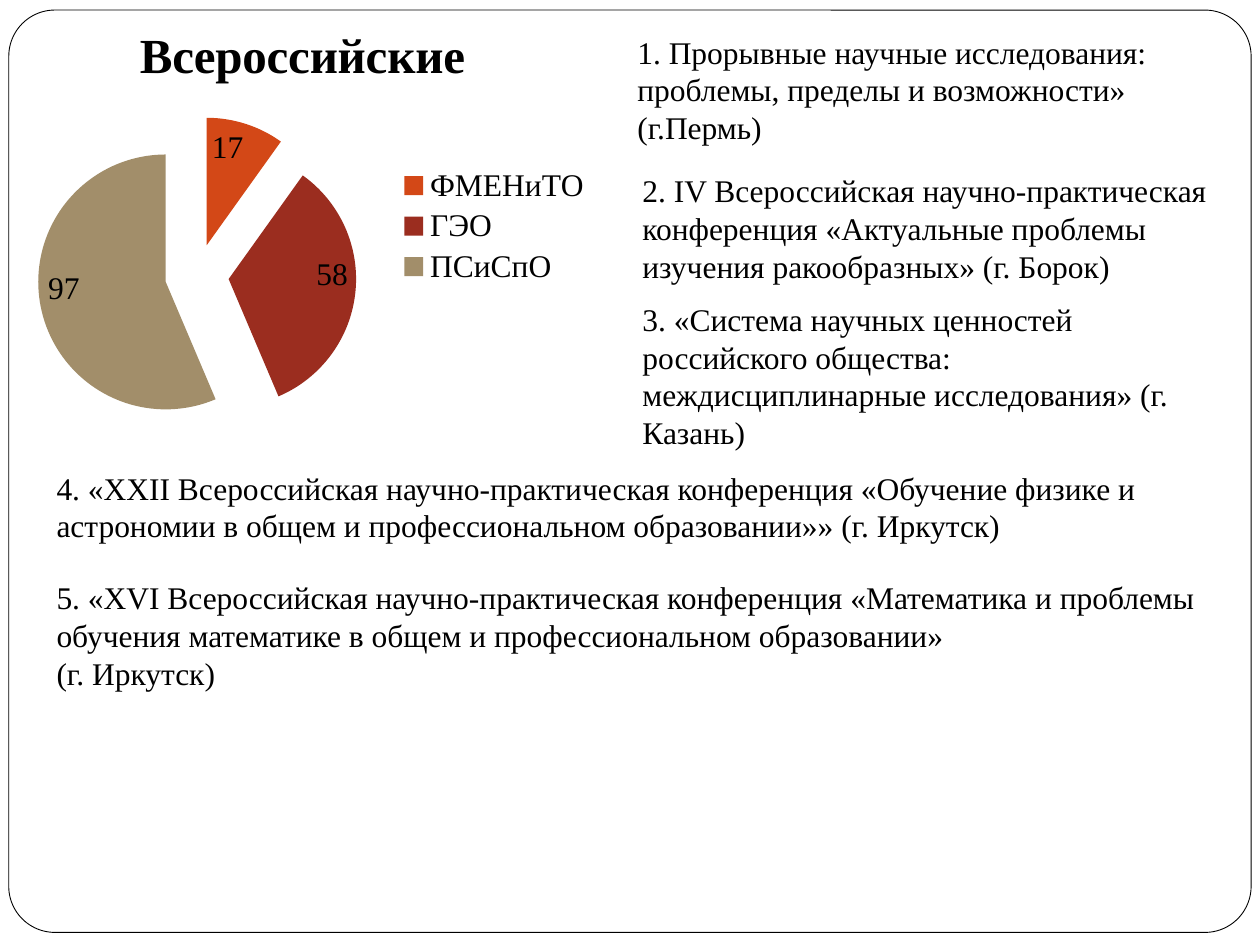
from dataclasses import dataclass

from lxml import etree
from pptx import Presentation
from pptx.chart.data import CategoryChartData
from pptx.dml.color import RGBColor
from pptx.enum.chart import XL_CHART_TYPE, XL_LABEL_POSITION, XL_LEGEND_POSITION
from pptx.enum.shapes import MSO_SHAPE
from pptx.oxml.ns import qn
from pptx.util import Inches, Pt

PIE = XL_CHART_TYPE.PIE
INSIDE_END = XL_LABEL_POSITION.INSIDE_END
RIGHT = XL_LEGEND_POSITION.RIGHT
ROUNDED = MSO_SHAPE.ROUNDED_RECTANGLE

FONT = "Times New Roman"
BLACK = RGBColor(0x00, 0x00, 0x00)
WHITE = RGBColor(0xFF, 0xFF, 0xFF)
ORANGE = RGBColor(0xD3, 0x48, 0x17)
RED = RGBColor(0x9B, 0x2D, 0x1F)
SAND = RGBColor(0xA2, 0x8E, 0x6A)

TITLE = "Всероссийские"
EXPLOSION = 25


@dataclass(frozen=True)
class Faculty:
    name: str
    count: int
    color: RGBColor


@dataclass(frozen=True)
class Conference:
    left: float
    top: float
    width: float
    height: float
    paragraphs: tuple[str, ...]


FACULTIES = [
    Faculty("ФМЕНиТО", 17, ORANGE),
    Faculty("ГЭО", 58, RED),
    Faculty("ПСиСпО", 97, SAND),
]

CONFERENCES = [
    Conference(4.96, 0.21, 5.04, 1.01, (
        "1. Прорывные научные исследования: проблемы, пределы и возможности» (г.Пермь)",)),
    Conference(5, 1.31, 5, 1.01, (
        "2. IV Всероссийская научно-практическая конференция "
        "«Актуальные проблемы изучения ракообразных» (г. Борок)",)),
    Conference(5, 2.33, 4.65, 1.31, (
        "3. «Система научных ценностей российского общества: "
        "междисциплинарные исследования» (г. Казань)",)),
    Conference(0.35, 3.67, 9.65, 0.71, (
        "4. «XXII Всероссийская научно-практическая конференция «Обучение физике "
        "и астрономии в общем и профессиональном образовании»» (г. Иркутск)",)),
    Conference(0.35, 4.54, 9.45, 1.01, (
        "5. «XVI Всероссийская научно-практическая конференция «Математика и проблемы "
        "обучения математике в общем и профессиональном образовании»",
        "(г. Иркутск)")),
]


def format_font(font, *, size: float = 18, bold: bool = False) -> None:
    font.name = FONT
    font.size = Pt(size)
    font.bold = bold
    font.color.rgb = BLACK


def add_text(p, text: str, **fmt) -> None:
    r = p.add_run()
    r.text = text
    format_font(r.font, **fmt)


def add_frame(s) -> None:
    sp = s.shapes.add_shape(ROUNDED, Inches(0.07), Inches(0.08), Inches(9.86), Inches(7.32))
    sp.adjustments[0] = 0.05
    sp.shadow.inherit = False
    sp.fill.solid()
    sp.fill.fore_color.rgb = WHITE
    sp.line.color.rgb = BLACK
    sp.line.width = Pt(0.5)


def add_pie(s, faculties: list[Faculty]) -> None:
    data = CategoryChartData()
    data.categories = [f.name for f in faculties]
    data.add_series(TITLE, [f.count for f in faculties])
    chart = s.shapes.add_chart(PIE, 0, 0, Inches(4.8), Inches(3.59), data).chart
    format_font(chart.font)

    chart.has_title = True
    add_text(chart.chart_title.text_frame.paragraphs[0], TITLE, size=28, bold=True)
    chart.chart_title.include_in_layout = False
    chart.has_legend = True
    chart.legend.position = RIGHT
    chart.legend.include_in_layout = False

    plot = chart.plots[0]
    plot.vary_by_categories = True
    series = plot.series[0]
    for i, faculty in enumerate(faculties):
        fill = series.points[i].format.fill
        fill.solid()
        fill.fore_color.rgb = faculty.color
    labels = series.data_labels
    labels.show_value = True
    labels.position = INSIDE_END
    format_font(labels.font)

    explosion = etree.Element(qn("c:explosion"), val=str(EXPLOSION))
    series._element.find(qn("c:dPt")).addprevious(explosion)


def add_conference(s, conference: Conference) -> None:
    box = (conference.left, conference.top, conference.width, conference.height)
    tf = s.shapes.add_textbox(*map(Inches, box)).text_frame
    tf.word_wrap = True
    for i, text in enumerate(conference.paragraphs):
        p = tf.add_paragraph() if i else tf.paragraphs[0]
        add_text(p, text)


def main() -> None:
    """Build the slide on national conferences and save it."""
    prs = Presentation()
    prs.slide_width, prs.slide_height = Inches(10), Inches(7.5)
    s = prs.slides.add_slide(prs.slide_layouts[6])
    add_frame(s)
    add_pie(s, FACULTIES)
    for conference in CONFERENCES:
        add_conference(s, conference)
    prs.save("out.pptx")


if __name__ == "__main__":
    main()
